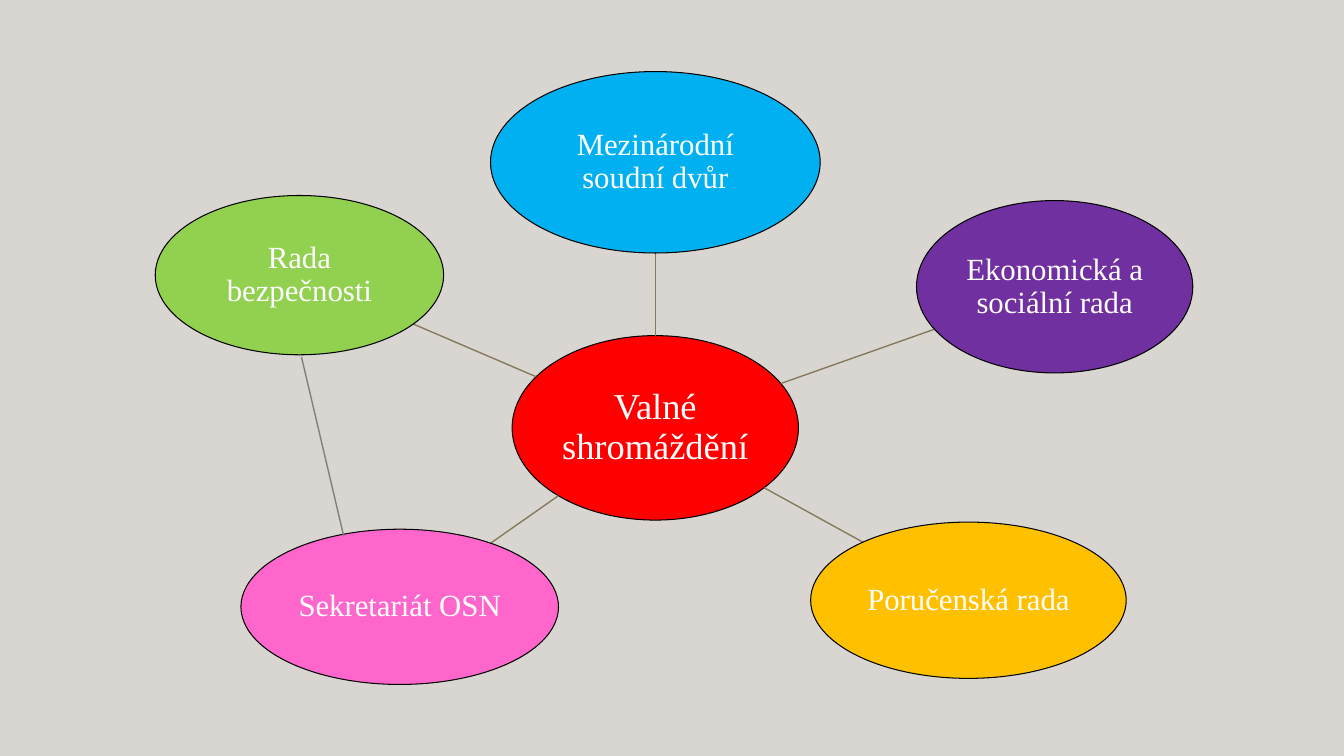
from math import hypot

from lxml import etree
from pptx import Presentation
from pptx import util as u
from pptx.dml.color import RGBColor
from pptx.enum import shapes, text
from pptx.oxml.ns import qn

# Content: label, fill, centre x, centre y, width, height (percent of the slide)
ASSEMBLY = ("Valné shromáždění", "FF0000", 48.76, 56.6, 21.3, 24.4)
ORGANS = [
    ("Mezinárodní soudní dvůr", "00B0F0", 48.76, 21.47, 24.53, 24),
    ("Ekonomická a sociální rada", "7030A0", 78.47, 37.93, 20.56, 22.8),
    ("Poručenská rada", "FFC000", 72.06, 79.4, 23.48, 20.67),
    ("Sekretariát OSN", "FF66CC", 29.74, 80.27, 23.63, 20.53),
    ("Rada bezpečnosti", "92D050", 22.28, 36.4, 21.46, 21.07),
]
COUNCIL_TO_SECRETARIAT = ((22.43, 47.2), (25.58, 70.93))
FONT = "Times New Roman"

deck = Presentation()
deck.slide_width, deck.slide_height = u.Inches(13.33), u.Inches(7.5)
slide = deck.slides.add_slide(deck.slide_layouts[6])


def color(value):
    return RGBColor.from_string(value)


def across(share):
    return round(deck.slide_width * share / 100)


def down(share):
    return round(deck.slide_height * share / 100)


def add_organ(organ, size):
    label, fill, x, y, w, h = organ
    oval = slide.shapes.add_shape(
        shapes.MSO_SHAPE.OVAL, across(x - w / 2), down(y - h / 2), across(w), down(h))
    oval.shadow.inherit = False
    oval.fill.solid()
    oval.fill.fore_color.rgb = color(fill)
    oval.line.color.rgb = color("000000")
    oval.line.width = u.Pt(0.75)
    frame = oval.text_frame
    frame.word_wrap = True
    frame.vertical_anchor = text.MSO_ANCHOR.MIDDLE
    frame.margin_left = frame.margin_right = u.Inches(0.02)
    frame.margin_top = frame.margin_bottom = u.Inches(0.02)
    paragraph = frame.paragraphs[0]
    paragraph.alignment = text.PP_ALIGN.CENTER
    paragraph.line_spacing = 0.9
    run = paragraph.add_run()
    run.text = label
    run.font.name = FONT
    run.font.size = u.Pt(size)
    run.font.color.rgb = color("FFFFFF")


def add_link(start, end, stroke):
    link = slide.shapes.add_connector(
        shapes.MSO_CONNECTOR.STRAIGHT,
        across(start[0]), down(start[1]), across(end[0]), down(end[1]))
    link.line.color.rgb = color(stroke)
    link.line.width = u.Pt(1)
    etree.SubElement(link._element.spPr, qn("a:effectLst"))


def rim_point(organ, toward):
    """Point where the line between two centres leaves the first oval."""
    _, _, x, y, w, h = organ
    dx, dy = toward[2] - x, toward[3] - y
    reach = 1 / hypot(dx / (w / 2), dy / (h / 2))
    return x + dx * reach, y + dy * reach


# Background
slide.background.fill.solid()
slide.background.fill.fore_color.rgb = color("D9D6D1")

# Hub, then each organ on its spoke
add_organ(ASSEMBLY, 26)
for organ in ORGANS:
    add_link(rim_point(ASSEMBLY, organ), rim_point(organ, ASSEMBLY), "87795D")
    add_organ(organ, 22)

# Extra link between two outer organs
add_link(*COUNCIL_TO_SECRETARIAT, "808080")

deck.save("out.pptx")
